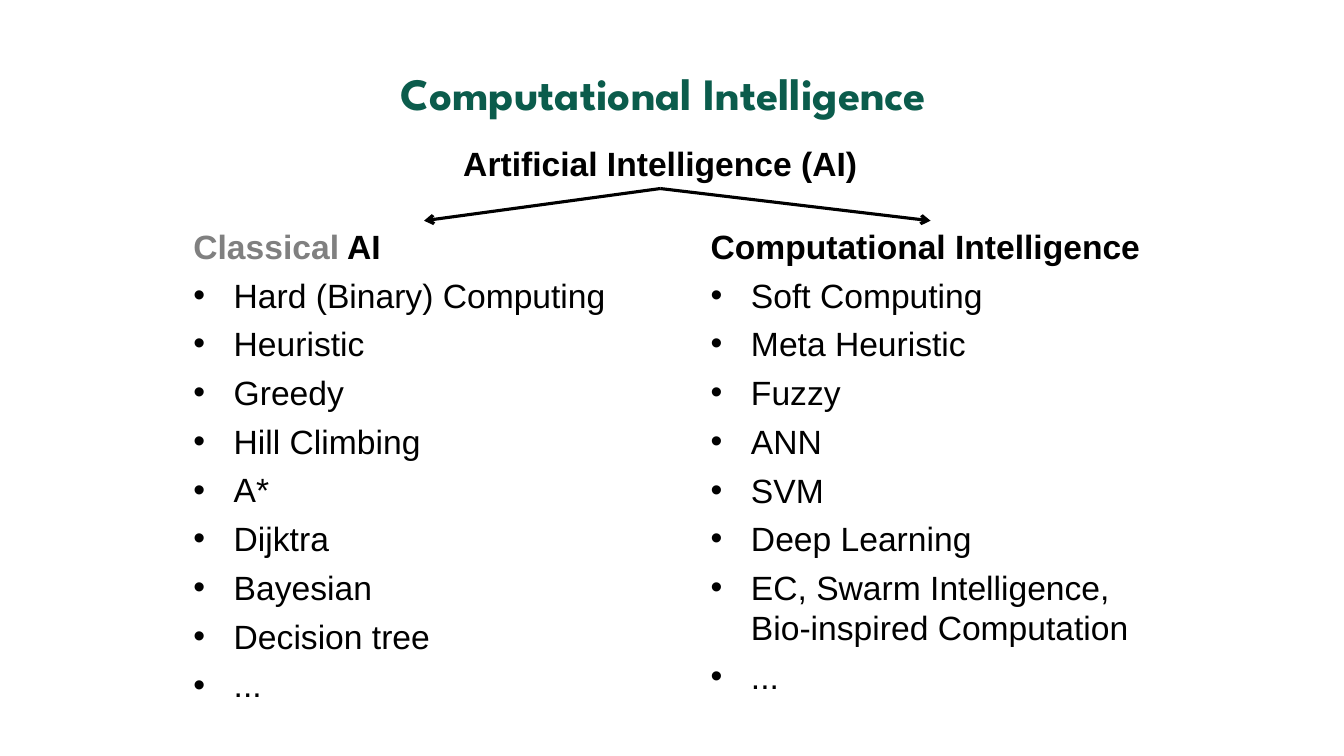
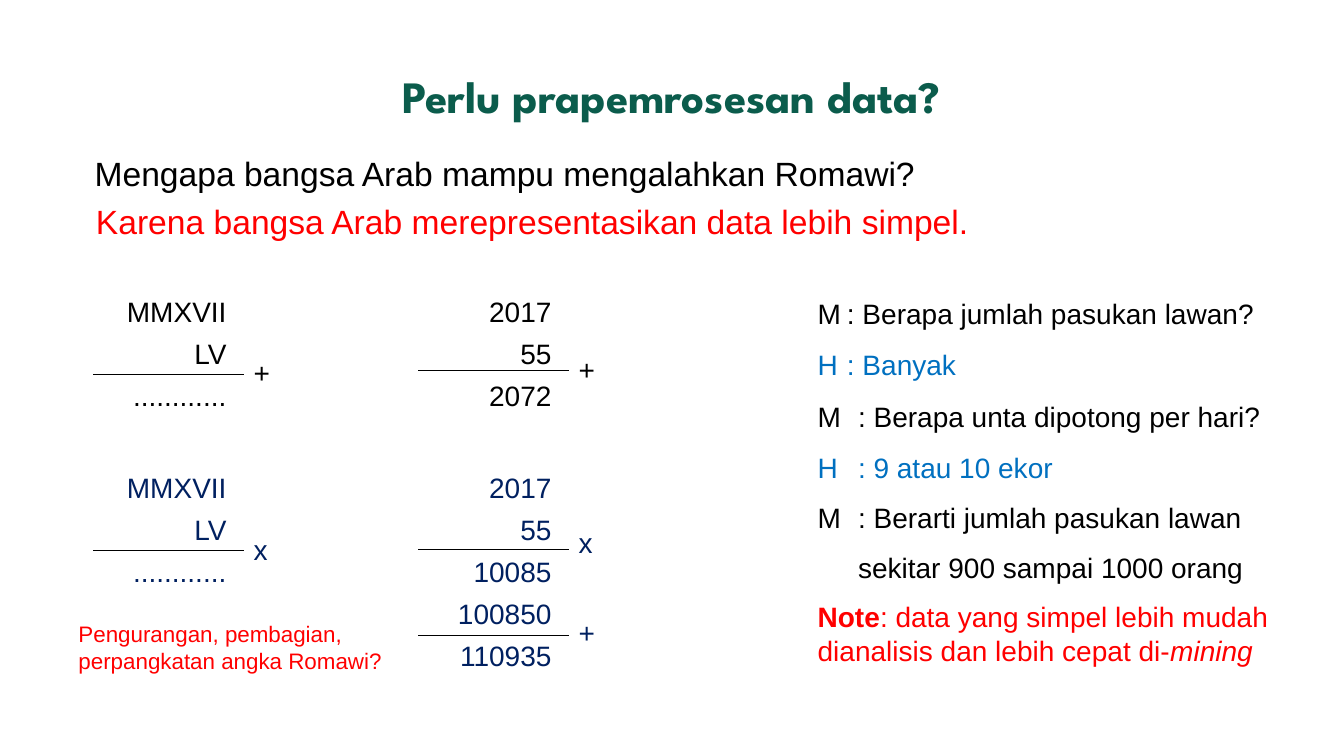
from dataclasses import dataclass, replace
from lxml.etree import SubElement
from pptx import Presentation
from pptx.dml.color import RGBColor
from pptx.enum.shapes import MSO_CONNECTOR
from pptx.enum.text import MSO_ANCHOR, PP_ALIGN
from pptx.oxml.ns import qn
from pptx.util import Inches, Pt

WIDE, HIGH = Inches(13.33), Inches(7.5)
BLACK = RGBColor(0x00, 0x00, 0x00)
GREY = RGBColor(0x80, 0x80, 0x80)
GREEN = RGBColor(0x0B, 0x5C, 0x4C)
NAVY = RGBColor(0x00, 0x20, 0x60)
BLUE = RGBColor(0x00, 0x70, 0xC0)
RED = RGBColor(0xFF, 0x00, 0x00)
HANG = Inches(0.4)
STOP = Inches(0.29)


@dataclass(frozen=True)
class Style:
    """Look of one paragraph."""
    size: int = 20
    tint: RGBColor = BLACK
    face: str = "Arial"
    bold: bool = False
    side: PP_ALIGN = PP_ALIGN.LEFT
    gap: int = 0
    lead: float = 1.0
    hang: bool = False
    dot: bool = False
    tab: bool = False


TITLE = Style(32, GREEN, "League Spartan", True, PP_ALIGN.CENTER)
HEAD = Style(24, bold=True)
ITEM = Style(24, gap=6, hang=True, dot=True)
TALK = Style(lead=1.5, tab=True)
REPLY = Style(lead=1.5, hang=True)


def across(share):
    """Turn a percentage of the slide's width into a length."""
    return round(WIDE * share / 100)


def down(share):
    """Turn a percentage of the slide's height into a length."""
    return round(HIGH * share / 100)


def indent(para, style):
    """Set the hanging indent, bullet and tab stop of a paragraph."""
    props = para._p.get_or_add_pPr()
    if style.hang:
        props.set("marL", str(HANG))
        props.set("indent", str(-HANG))
    if style.dot:
        SubElement(props, qn("a:buFont"), typeface="Arial")
        SubElement(props, qn("a:buChar"), char="•")
    if style.tab:
        tabs = SubElement(props, qn("a:tabLst"))
        SubElement(tabs, qn("a:tab"), pos=str(STOP), algn="l")


def write(slide, box, rows, wrap=True, anchor=MSO_ANCHOR.TOP):
    """Place rows of (text or runs, style) in a box of percentages."""
    left, top, width, height = box
    shape = slide.shapes.add_textbox(across(left), down(top), across(width), down(height))
    frame = shape.text_frame
    frame.word_wrap = wrap
    frame.vertical_anchor = anchor
    for spot, (runs, style) in enumerate(rows):
        para = frame.add_paragraph() if spot else frame.paragraphs[0]
        indent(para, style)
        para.alignment = style.side
        para.line_spacing = style.lead
        para.space_before = Pt(style.gap if spot else 0)
        font = para.font
        font.name, font.size, font.bold = style.face, Pt(style.size), style.bold
        font.color.rgb = style.tint
        for text, look in [(runs, {})] if isinstance(runs, str) else runs:
            run = para.add_run()
            run.text = text
            run.font.bold = look.get("bold")
            run.font.italic = look.get("slant")
            if "tint" in look:
                run.font.color.rgb = look["tint"]
    return shape


def title(slide, box, text):
    """Write the slide's title."""
    write(slide, box, [(text, TITLE)], anchor=MSO_ANCHOR.MIDDLE)


def rule(slide, start, end, weight):
    """Draw a black line between two points."""
    line = slide.shapes.add_connector(MSO_CONNECTOR.STRAIGHT, *start, *end)
    line.line.color.rgb = BLACK
    line.line.width = Pt(weight)
    SubElement(line._element.spPr, qn("a:effectLst"))
    return line


def branch(slide, root, leaf):
    """Join the bottom of one box to the top of another by an arrow."""
    line = rule(slide, (0, 0), (0, 0), 2.25)
    line.begin_connect(root, 2)
    line.end_connect(leaf, 0)
    SubElement(line.line._get_or_add_ln(), qn("a:tailEnd"), type="arrow")


def column(slide, box, head, items):
    """Write a heading with bullets below it."""
    return write(slide, box, [(head, HEAD)] + [(item, ITEM) for item in items])


def tally(slide, box, terms, marks, tint):
    """Write a column sum with its rules and signs, set off from the box's top."""
    left, top, width, _ = box
    style = Style(tint=tint, side=PP_ALIGN.RIGHT, gap=6)
    write(slide, box, [(term, style) for term in terms])
    edge = left + width * 1.05
    for level, rise, sign in marks:
        y = down(top + level)
        rule(slide, (across(left), y), (across(edge), y), 0.75)
        write(slide, (edge, top + level - rise, 2.7, 5.9), [(sign, Style(tint=tint))])


def fields(slide):
    """Build the slide that splits the field in two."""
    title(slide, (14.6, 8, 69.6, 8.5), "Computational Intelligence")
    root = write(slide, (33.6, 18.27, 31.06, 6.67),
                 [("Artificial Intelligence (AI)", replace(HEAD, side=PP_ALIGN.CENTER))], wrap=False)
    top = 29.2
    hard = column(slide, (13.65, top, 35.8, 65.3),
                  [("Classical", {"tint": GREY}), (" AI", {})],
                  ["Hard (Binary) Computing", "Heuristic", "Greedy", "Hill Climbing", "A*",
                   "Dijktra", "Bayesian", "Decision tree", "..."])
    soft = column(slide, (52.14, top, 34.2, 64.1), "Computational Intelligence",
                  ["Soft Computing", "Meta Heuristic", "Fuzzy", "ANN", "SVM", "Deep Learning",
                   "EC, Swarm Intelligence, Bio-inspired Computation", "..."])
    for leaf in (hard, soft):
        branch(slide, root, leaf)


def sums(slide):
    """Place the four sums on a grid of two columns and two rows."""
    roman, arab = 6.95, 31.13
    plus, times = 38.27, 61.6
    wide = 10.65
    numerals = ["MMXVII", "LV", "............"]
    tally(slide, (roman, plus, wide, 17), numerals, [(11.3, 3.2, "+")], BLACK)
    tally(slide, (arab, plus, wide, 17), ["2017", "55", "2072"], [(10.8, 3.1, "+")], BLACK)
    tally(slide, (roman, times, wide, 17), numerals, [(11.2, 3, "x")], NAVY)
    tally(slide, (arab, times, wide, 28.3), ["2017", "55", "10085", "100850", "110935"],
          [(11.1, 3.9, "x"), (22.4, 3.2, "+")], NAVY)


def talk(slide, left):
    """Write the dialogue and its note in one column."""
    wide = 37.2
    write(slide, (left, 36.4, wide, 14.8),
          [("M\t: Berapa jumlah pasukan lawan?", TALK),
           ("H\t: Banyak", replace(TALK, tint=BLUE))])
    write(slide, (left, 50, wide, 28.3),
          [("M\t: Berapa unta dipotong per hari?", REPLY),
           ("H\t: 9 atau 10 ekor", replace(REPLY, tint=BLUE)),
           ("M\t: Berarti jumlah pasukan lawan sekitar 900 sampai 1000 orang", REPLY)])
    note = [("Note", {"bold": True}),
            (": data yang simpel lebih mudah dianalisis dan lebih cepat di-", {}),
            ("mining", {"slant": True})]
    write(slide, (left, 78.67, 35.4, 10.3), [(note, Style(tint=RED))])


def data(slide):
    """Build the slide on simple data."""
    title(slide, (21.8, 8.4, 56.4, 8.5), "Perlu prapemrosesan data?")
    write(slide, (6.3, 19.6, 70, 6.7),
          [("Mengapa bangsa Arab mampu mengalahkan Romawi?", Style(24))])
    write(slide, (6.4, 25.87, 70, 6.7),
          [("Karena bangsa Arab merepresentasikan data lebih simpel.", Style(24, RED))])
    sums(slide)
    talk(slide, 60.1)
    write(slide, (5.1, 81.33, 26, 8.5),
          [("Pengurangan, pembagian, perpangkatan angka Romawi?", Style(16, RED))])


def main():
    """Build and save the deck."""
    deck = Presentation()
    deck.slide_width, deck.slide_height = WIDE, HIGH
    for build in (fields, data):
        build(deck.slides.add_slide(deck.slide_layouts[6]))
    deck.save("out.pptx")


if __name__ == "__main__":
    main()
